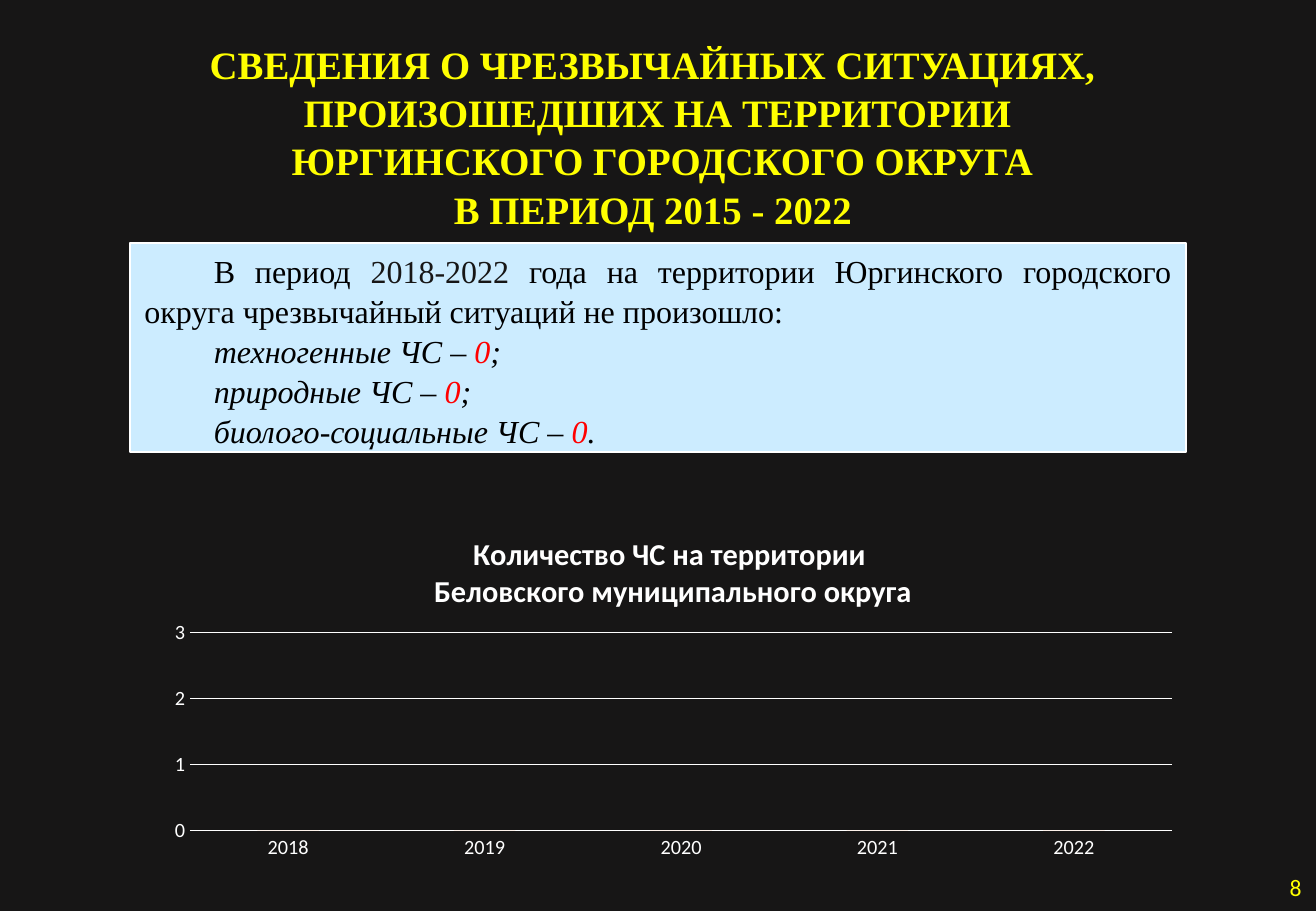
from pptx import Presentation
from pptx.chart.data import CategoryChartData
from pptx.dml.color import RGBColor
from pptx.enum.chart import XL_CHART_TYPE as ChartType, XL_TICK_MARK as TickMark
from pptx.enum.shapes import MSO_SHAPE as Shape
from pptx.enum.text import MSO_ANCHOR as Anchor, MSO_AUTO_SIZE as AutoSize, PP_ALIGN as Align
from pptx.oxml import parse_xml
from pptx.oxml.ns import nsdecls
from pptx.util import Cm, Pt

COLORS = {
    "background": "171616",
    "yellow": "FFFF00",
    "panel": "CCECFF",
    "white": "FFFFFF",
    "black": "000000",
    "red": "FF0000",
    "column": "F29054",
}
SERIF, SANS = "Times New Roman", "Calibri"
HEADING = [
    "СВЕДЕНИЯ О ЧРЕЗВЫЧАЙНЫХ СИТУАЦИЯХ, ",
    "ПРОИЗОШЕДШИХ НА ТЕРРИТОРИИ",
    " ЮРГИНСКОГО ГОРОДСКОГО ОКРУГА",
    "В ПЕРИОД 2015 - 2022 ",
]
INTRO = [
    ("В период ", "black"),
    ("2018-2022 ", "background"),
    ("года на территории Юргинского городского округа "
     "чрезвычайный ситуаций не произошло: ", "black"),
]
INCIDENTS = [("техногенные", "; "), ("природные", "; "), ("биолого-социальные", ".")]
CHART_TITLE = ["Количество ЧС на территории ", "Беловского муниципального округа"]
YEARS = ["2018", "2019", "2020", "2021", "2022"]


def rgb(name):
    return RGBColor.from_string(COLORS[name])


def style_font(font, size, color, face, bold=False, italic=False):
    font.size, font.name = Pt(size), face
    font.bold, font.italic = bold, italic
    font.color.rgb = rgb(color)


def write(frame, paragraphs, size, face, align, bold=False, italic=False,
          indent=0, spacing=None):
    """Write paragraphs given as lists of (text, color) spans."""
    for index, spans in enumerate(paragraphs):
        para = frame.add_paragraph() if index or frame.paragraphs[0].runs else frame.paragraphs[0]
        para.alignment = align
        if spacing:
            para.line_spacing = spacing
        if indent:
            para._p.get_or_add_pPr().set("indent", str(Cm(indent)))
        for text, color in spans:
            span = para.add_run()
            span.text = text
            style_font(span.font, size, color, face, bold, italic)


def prepare_frame(box, anchor):
    frame = box.text_frame
    frame.word_wrap, frame.auto_size = True, AutoSize.NONE
    frame.vertical_anchor = anchor
    frame.margin_left = frame.margin_right = Cm(0.3)
    frame.margin_top = frame.margin_bottom = Cm(0.15)
    return frame


def add_heading(page):
    box = page.shapes.title
    box.left, box.top, box.width, box.height = Cm(0), Cm(0.91), Cm(27.51), Cm(3.84)
    write(prepare_frame(box, Anchor.MIDDLE), [[(line, "yellow")] for line in HEADING],
          size=23, face=SERIF, align=Align.CENTER, bold=True, spacing=1.04)


def add_panel(page):
    box = page.shapes.add_shape(Shape.RECTANGLE, Cm(2.72), Cm(5.08), Cm(22.07), Cm(4.37))
    box.shadow.inherit = False
    box.fill.solid()
    box.fill.fore_color.rgb = rgb("panel")
    box.line.color.rgb = rgb("white")
    box.line.width = Pt(1.5)
    frame = prepare_frame(box, Anchor.TOP)
    layout = dict(size=19, face=SERIF, align=Align.JUSTIFY, indent=1.45, spacing=1.04)
    write(frame, [INTRO], **layout)
    incidents = [[(f"{kind} ЧС – ", "black"), ("0", "red"), (ending, "black")]
                 for kind, ending in INCIDENTS]
    write(frame, incidents, italic=True, **layout)


def make_layout(**places):
    target = '<c:layoutTarget val="inner"/>' if "w" in places else ""
    modes = "".join(f'<c:{key}Mode val="edge"/>' for key in places if key in "xy")
    values = "".join(f'<c:{key} val="{value}"/>' for key, value in places.items())
    return parse_xml(f'<c:layout {nsdecls("c")}><c:manualLayout>{target}{modes}{values}'
                     "</c:manualLayout></c:layout>")


def place_chart_parts(chart):
    space = chart._chartSpace
    for old in space.xpath("c:chart/c:title/c:layout | c:chart/c:plotArea/c:layout"):
        old.getparent().remove(old)
    space.xpath("c:chart/c:title/c:tx")[0].addnext(make_layout(x=0.27, y=0.05))
    plot_area = space.xpath("c:chart/c:plotArea")[0]
    plot_area.insert(0, make_layout(x=0.04, y=0.34, w=0.94, h=0.56))


def style_axis(axis):
    axis.major_tick_mark = axis.minor_tick_mark = TickMark.NONE
    style_font(axis.tick_labels.font, 12, "white", SANS)


def style_line(line):
    line.color.rgb = rgb("white")
    line.width = Pt(0.75)


def add_incident_chart(page):
    data = CategoryChartData()
    data.categories = YEARS
    data.add_series("Series 1", [0] * len(YEARS))
    chart = page.shapes.add_chart(ChartType.COLUMN_CLUSTERED, Cm(3.1), Cm(10.72),
                                  Cm(21.84), Cm(7.39), data).chart
    style_font(chart.font, 10, "white", SANS)
    chart.has_legend = False
    chart.has_title = True
    write(chart.chart_title.text_frame, [[(line, "white")] for line in CHART_TITLE],
          size=18, face=SANS, align=Align.CENTER, bold=True)
    plot = chart.plots[0]
    plot.gap_width, plot.overlap, plot.vary_by_categories = 219, -27, False
    fill = plot.series[0].format.fill
    fill.solid()
    fill.fore_color.rgb = rgb("column")
    years, counts = chart.category_axis, chart.value_axis
    style_axis(years)
    style_axis(counts)
    style_line(years.format.line)
    counts.format.line.fill.background()
    counts.minimum_scale, counts.maximum_scale, counts.major_unit = 0, 3, 1
    counts.has_major_gridlines = True
    style_line(counts.major_gridlines.format.line)
    place_chart_parts(chart)


def add_page_number(page):
    box = page.shapes.add_textbox(Cm(21.08), Cm(18.03), Cm(6.43), Cm(1.02))
    write(prepare_frame(box, Anchor.MIDDLE), [[("8", "yellow")]],
          size=14, face=SANS, align=Align.RIGHT)


def main():
    deck = Presentation()
    deck.slide_width, deck.slide_height = Cm(27.51), Cm(19.05)
    page = deck.slides.add_slide(deck.slide_layouts[5])
    page.background.fill.solid()
    page.background.fill.fore_color.rgb = rgb("background")
    add_heading(page)
    add_panel(page)
    add_incident_chart(page)
    add_page_number(page)
    deck.save("out.pptx")


if __name__ == "__main__":
    main()
